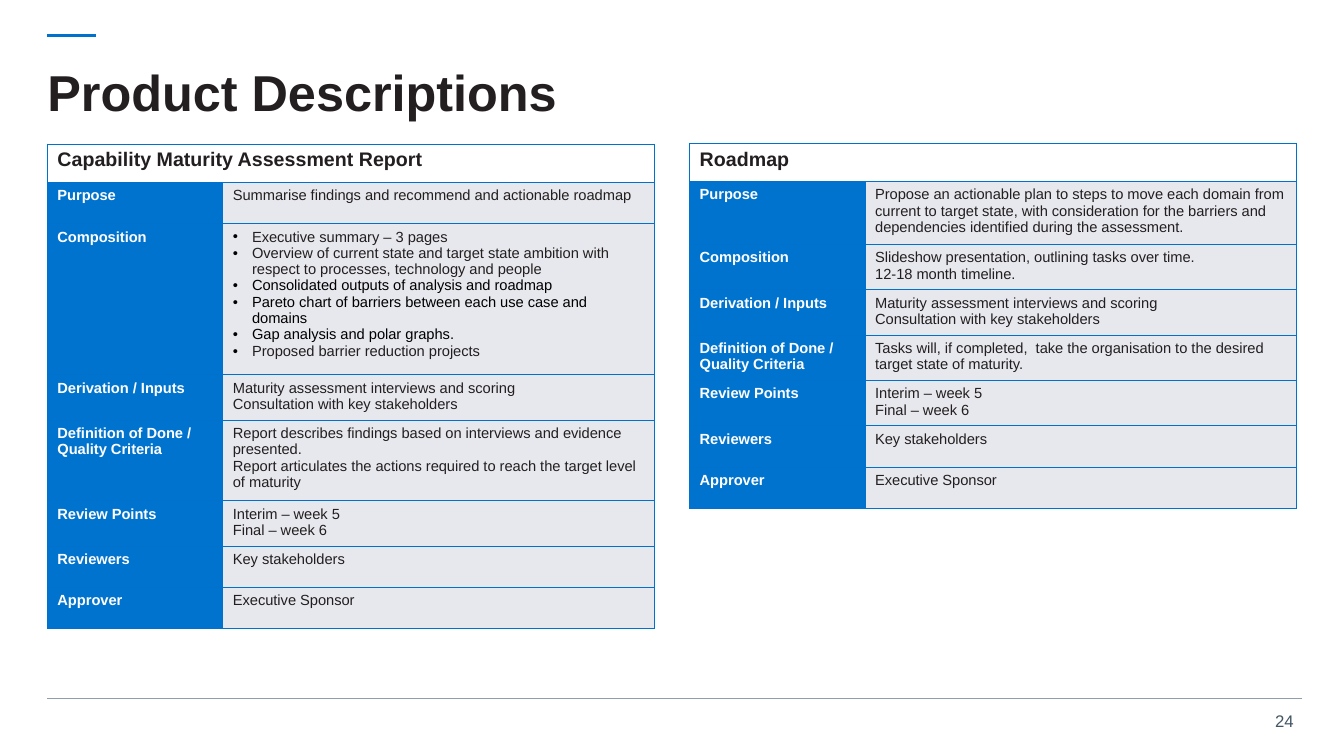
from pptx import Presentation
from pptx.dml.color import RGBColor
from pptx.enum.shapes import MSO_CONNECTOR
from pptx.enum.text import MSO_ANCHOR, PP_ALIGN
from pptx.oxml import parse_xml
from pptx.oxml.ns import nsdecls
from pptx.util import Inches, Pt

INK = RGBColor(0x23, 0x1F, 0x20)
BLACK = RGBColor(0x00, 0x00, 0x00)
WHITE = RGBColor(0xFF, 0xFF, 0xFF)
BLUE = RGBColor(0x00, 0x73, 0xCF)
EDGE = RGBColor(0x00, 0x72, 0xCE)
PALE = RGBColor(0xE7, 0xE8, 0xED)
GREY = RGBColor(0x91, 0x9E, 0xA8)
SLATE = RGBColor(0x42, 0x55, 0x63)

# Row labels and the rows that both products share
LABELS = ["Purpose", "Composition", "Derivation / Inputs",
          "Definition of Done / Quality Criteria", "Review Points",
          "Reviewers", "Approver"]
INPUTS = ["Maturity assessment interviews and scoring",
          "Consultation with key stakeholders"]
REVIEW = [["Interim – week 5", "Final – week 6"],
          ["Key stakeholders"], ["Executive Sponsor"]]

# Report contents: each line with its colour
PARTS = [
    ("Executive summary – 3 pages", INK),
    ("Overview of current state and target state ambition with respect to "
     "processes, technology and people", INK),
    ("Consolidated outputs of analysis and roadmap", BLACK),
    ("Pareto chart of barriers between each use case and domains", BLACK),
    ("Gap analysis and polar graphs.", BLACK),
    ("Proposed barrier reduction projects", INK),
]
REPORT = [
    ["Summarise findings and recommend and actionable roadmap"],
    PARTS,
    INPUTS,
    ["Report describes findings based on interviews and evidence presented.",
     "Report articulates the actions required to reach the target level of "
     "maturity"],
] + REVIEW
ROADMAP = [
    ["Propose an actionable plan to steps to move each domain from current to "
     "target state, with consideration for the barriers and dependencies "
     "identified during the assessment."],
    ["Slideshow presentation, outlining tasks over time.",
     "12-18 month timeline."],
    INPUTS,
    ["Tasks will, if completed,  take the organisation to the desired target "
     "state of maturity."],
] + REVIEW


def add_bullet(para):
    props = para._p.get_or_add_pPr()
    props.set("marL", str(Inches(0.19)))
    props.set("indent", str(Inches(-0.19)))
    for tag in (f'<a:buClr {nsdecls("a")}><a:srgbClr val="{BLACK}"/></a:buClr>',
                f'<a:buFont {nsdecls("a")} typeface="Arial"/>',
                f'<a:buChar {nsdecls("a")} char="•"/>'):
        props.append(parse_xml(tag))


def write(frame, lines, size=10.5, color=INK, bold=False, align=None, pitch=None):
    """Fill a frame; a (text, colour) pair makes a bulleted line."""
    for i, line in enumerate(lines):
        para = frame.paragraphs[0] if i == 0 else frame.add_paragraph()
        text, shade = (line, color) if isinstance(line, str) else line
        if align is not None:
            para.alignment = align
        if pitch:
            para.line_spacing = pitch
        if not isinstance(line, str):
            add_bullet(para)
        run = para.add_run()
        run.text = text
        font = run.font
        font.name, font.size, font.bold = "Arial", Pt(size), bold
        font.color.rgb = shade


class Page:
    def __init__(self, deck):
        self.slide = deck.slides.add_slide(deck.slide_layouts[6])
        self.shapes = self.slide.shapes

    def line(self, left, right, top, color, width):
        rule = self.shapes.add_connector(
            MSO_CONNECTOR.STRAIGHT, Inches(left), Inches(top),
            Inches(right), Inches(top))
        rule.line.color.rgb = color
        rule.line.width = Pt(width)
        rule._element.spPr.append(parse_xml(f'<a:effectLst {nsdecls("a")}/>'))

    def text(self, box, text, inset=(0, 0), anchor=MSO_ANCHOR.TOP, **style):
        frame = self.shapes.add_textbox(*map(Inches, box)).text_frame
        frame.word_wrap = True
        frame.vertical_anchor = anchor
        frame.margin_left = frame.margin_right = Inches(inset[0])
        frame.margin_top = frame.margin_bottom = Inches(inset[1])
        write(frame, [text], **style)

    def cell(self, cell, lines, fill, **style):
        cell.fill.solid()
        cell.fill.fore_color.rgb = fill
        props = cell._tc.get_or_add_tcPr()
        for i, side in enumerate("LRTB"):
            props.insert(i, parse_xml(
                f'<a:ln{side} {nsdecls("a")} w="{Pt(1)}"><a:solidFill>'
                f'<a:srgbClr val="{EDGE}"/></a:solidFill></a:ln{side}>'))
        write(cell.text_frame, lines, **style)

    def table(self, left, top, title, body):
        count = len(body) + 1
        grid = self.shapes.add_table(
            count, 2, Inches(left), Inches(top), Inches(6.02),
            Inches(0.38 + 0.41 * len(body))).table
        grid.first_row = grid.horz_banding = False
        for col, width in zip(grid.columns, (1.74, 4.28)):
            col.width = Inches(width)
        for i, row in enumerate(grid.rows):
            row.height = Inches(0.41 if i else 0.38)
        # Heading across both columns
        grid.cell(0, 0).merge(grid.cell(0, 1))
        self.cell(grid.cell(0, 0), [title], WHITE, size=14, bold=True)
        self.cell(grid.cell(0, 1), [], WHITE)
        # Label and description rows
        for i, (label, lines) in enumerate(zip(LABELS, body), 1):
            self.cell(grid.cell(i, 0), [label], BLUE, color=WHITE, bold=True)
            self.cell(grid.cell(i, 1), lines, PALE)


def main():
    deck = Presentation()
    deck.slide_width, deck.slide_height = Inches(13.33), Inches(7.5)
    page = Page(deck)

    # Page frame
    page.text((12.52, 7, 0.41, 0.3), "24", inset=(0.1, 0.05), size=12,
              color=SLATE, align=PP_ALIGN.RIGHT)
    page.line(0.47, 0.95, 0.35, EDGE, 2)
    page.line(0.47, 12.91, 6.93, GREY, 0.75)

    # Title
    page.text((0.47, 0.47, 12.47, 0.95), "Product Descriptions",
              anchor=MSO_ANCHOR.MIDDLE, size=36, bold=True, pitch=0.9)

    # Products
    page.table(0.47, 1.43, "Capability Maturity Assessment Report", REPORT)
    page.table(6.84, 1.42, "Roadmap", ROADMAP)

    deck.save("out.pptx")


if __name__ == "__main__":
    main()
